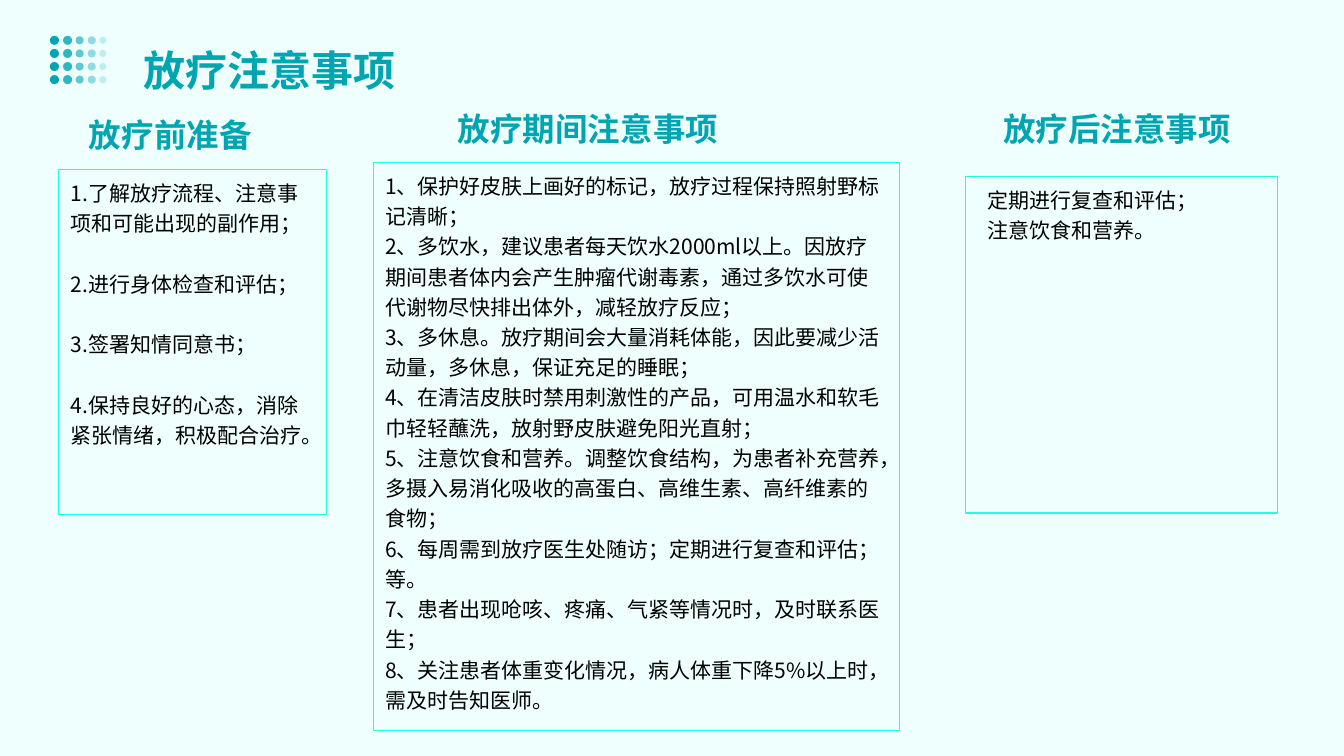
"""Build the slide on precautions before, during and after radiotherapy."""
from dataclasses import dataclass
from itertools import product

from lxml.etree import SubElement
from pptx import Presentation
from pptx.dml.color import RGBColor
from pptx.enum.shapes import MSO_SHAPE
from pptx.enum.text import MSO_ANCHOR, MSO_AUTO_SIZE, PP_ALIGN
from pptx.oxml.ns import qn
from pptx.shapes.base import BaseShape
from pptx.slide import Slide
from pptx.util import Inches, Pt

TEAL = RGBColor(0x00, 0xA5, 0xB2)
AQUA = RGBColor(0x1E, 0xFF, 0xE5)
MINT = RGBColor(0xEF, 0xFF, 0xFD)
BLACK = RGBColor(0x00, 0x00, 0x00)
FONT = "Noto Sans CJK SC"
SLIDE_WIDTH, SLIDE_HEIGHT = 13.33, 7.5
DOT_ROWS, DOT_TOP, DOT_PITCH = 4, 0.4, 0.13
DOT_CENTERS = (0.54, 0.67, 0.79, 0.91, 1.02)
DOT_DIAMETERS = (0.09, 0.09, 0.08, 0.08, 0.07)


@dataclass(frozen=True)
class Box:
    """Position and size in inches."""

    left: float
    top: float
    width: float
    height: float

    def lengths(self) -> tuple[Inches, Inches, Inches, Inches]:
        """Return the four lengths for a shape call."""
        return Inches(self.left), Inches(self.top), Inches(self.width), Inches(self.height)


@dataclass(frozen=True)
class Phase:
    """A treatment phase with its heading and framed advice."""

    heading: str
    heading_box: Box
    frame: Box
    advice: tuple[str, ...]
    align: PP_ALIGN = PP_ALIGN.LEFT
    gap: float = 0
    indent: float = 0


PHASES = (
    Phase("放疗前准备", Box(-0.34, 1.17, 2.96, 0.44), Box(0.58, 1.68, 2.66, 3.42), (
        "1.了解放疗流程、注意事项和可能出现的副作用；",
        "2.进行身体检查和评估；",
        "3.签署知情同意书；",
        "4.保持良好的心态，消除紧张情绪，积极配合治疗。",
    ), align=PP_ALIGN.RIGHT, gap=21.6),
    Phase("放疗期间注意事项", Box(4.42, 1.11, 4.51, 0.43), Box(3.7, 1.61, 5.22, 5.64), (
        "1、保护好皮肤上画好的标记，放疗过程保持照射野标记清晰；",
        "2、多饮水，建议患者每天饮水2000ml以上。因放疗期间患者体内会产生肿瘤代谢毒素，"
        "通过多饮水可使代谢物尽快排出体外，减轻放疗反应；",
        "3、多休息。放疗期间会大量消耗体能，因此要减少活动量，多休息，保证充足的睡眠；",
        "4、在清洁皮肤时禁用刺激性的产品，可用温水和软毛巾轻轻蘸洗，放射野皮肤避免阳光直射；",
        "5、注意饮食和营养。调整饮食结构，为患者补充营养，多摄入易消化吸收的高蛋白、"
        "高维生素、高纤维素的食物；",
        "6、每周需到放疗医生处随访；定期进行复查和评估；等。",
        "7、患者出现呛咳、疼痛、气紧等情况时，及时联系医生；",
        "8、关注患者体重变化情况，病人体重下降5%以上时，需及时告知医师。",
    )),
    Phase("放疗后注意事项", Box(9.83, 1.11, 4.51, 0.43), Box(9.58, 1.75, 3.09, 3.34), (
        "定期进行复查和评估；",
        "注意饮食和营养。",
    ), indent=0.09),
)


def write_text(shape: BaseShape, *lines: str, size: float, color: RGBColor, bold: bool = False,
               align: PP_ALIGN = PP_ALIGN.LEFT, spacing: float = 1.2, gap: float = 0,
               margins: tuple[float, float, float, float] = (0.12, 0.06, 0.12, 0.06)) -> None:
    """Fill a shape with formatted paragraphs."""
    frame = shape.text_frame
    frame.word_wrap = True
    frame.auto_size = MSO_AUTO_SIZE.NONE
    frame.vertical_anchor = MSO_ANCHOR.TOP
    frame.margin_left, frame.margin_top, frame.margin_right, frame.margin_bottom = map(Inches, margins)
    for index, line in enumerate(lines):
        paragraph = frame.paragraphs[0] if index == 0 else frame.add_paragraph()
        paragraph.alignment = align
        paragraph.line_spacing = spacing
        paragraph.space_before = Pt(0)
        paragraph.space_after = Pt(gap if index < len(lines) - 1 else 0)
        run = paragraph.add_run()
        run.text = line
        run.font.size, run.font.bold, run.font.name = Pt(size), bold, FONT
        run.font.color.rgb = color
        SubElement(run.font._element, qn("a:ea")).set("typeface", FONT)


def draw_phase(slide: Slide, phase: Phase) -> None:
    """Draw the heading and the framed advice of a phase."""
    frame = slide.shapes.add_shape(MSO_SHAPE.RECTANGLE, *phase.frame.lengths())
    frame.shadow.inherit = False
    frame.fill.background()
    frame.line.color.rgb = AQUA
    frame.line.width = Pt(0.75)
    write_text(frame, *phase.advice, size=15, color=BLACK, gap=phase.gap,
               margins=(0.12 + phase.indent, 0.06, 0.12, 0.06))
    heading = slide.shapes.add_textbox(*phase.heading_box.lengths())
    write_text(heading, phase.heading, size=23.25, color=TEAL, bold=True,
               align=phase.align, spacing=0.77)


def draw_dots(slide: Slide) -> None:
    """Draw the grid of dots that fades to the right."""
    group = slide.shapes.add_group_shape()
    columns = enumerate(zip(DOT_CENTERS, DOT_DIAMETERS))
    for row, (column, (center, diameter)) in product(range(DOT_ROWS), columns):
        box = Box(center - diameter / 2, DOT_TOP + row * DOT_PITCH - diameter / 2, diameter, diameter)
        dot = group.shapes.add_shape(MSO_SHAPE.OVAL, *box.lengths())
        dot.shadow.inherit = False
        dot.fill.solid()
        dot.fill.fore_color.rgb = TEAL
        dot.line.fill.background()
        if column:
            color = dot._element.spPr.find(qn("a:solidFill"))[0]
            SubElement(color, qn("a:alpha")).set("val", str(100000 - 20000 * column))


def draw_title(slide: Slide) -> None:
    """Place and format the slide title."""
    title = slide.shapes.title
    title.left, title.top, title.width, title.height = Box(1.2, 0.1, 10.94, 0.98).lengths()
    write_text(title, "放疗注意事项", size=30, color=TEAL, bold=True, spacing=1.4,
               margins=(0.22, 0.14, 0.06, 0.14))


def main() -> None:
    """Build and save the presentation."""
    presentation = Presentation()
    presentation.slide_width = Inches(SLIDE_WIDTH)
    presentation.slide_height = Inches(SLIDE_HEIGHT)
    slide = presentation.slides.add_slide(presentation.slide_layouts[5])
    slide.background.fill.solid()
    slide.background.fill.fore_color.rgb = MINT
    draw_title(slide)
    draw_dots(slide)
    for phase in PHASES:
        draw_phase(slide, phase)
    presentation.save("out.pptx")


if __name__ == "__main__":
    main()
